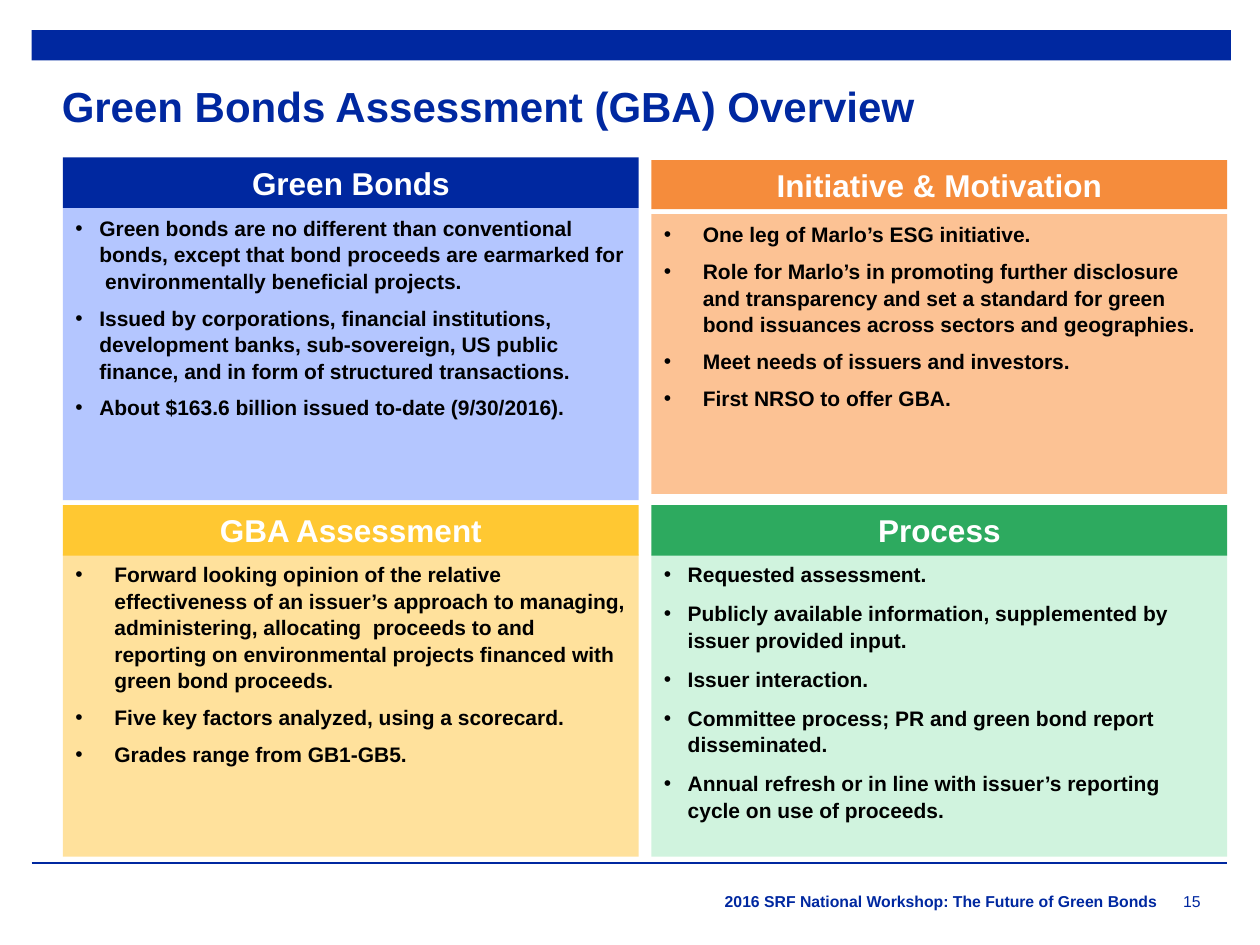
from dataclasses import dataclass

from lxml.etree import SubElement
from pptx import Presentation
from pptx.dml.color import RGBColor
from pptx.enum.shapes import MSO_CONNECTOR, MSO_SHAPE
from pptx.enum.text import MSO_ANCHOR, PP_ALIGN
from pptx.oxml.ns import qn
from pptx.util import Inches, Pt

NAVY = RGBColor(0x00, 0x28, 0xA0)
PALE_BLUE = RGBColor(0xB4, 0xC6, 0xFF)
ORANGE = RGBColor(0xF5, 0x8C, 0x3C)
PALE_ORANGE = RGBColor(0xFC, 0xC2, 0x94)
YELLOW = RGBColor(0xFF, 0xC8, 0x32)
PALE_YELLOW = RGBColor(0xFF, 0xE1, 0x9C)
GREEN = RGBColor(0x2D, 0xAA, 0x5F)
PALE_GREEN = RGBColor(0xD0, 0xF3, 0xDE)
WHITE = RGBColor(0xFF, 0xFF, 0xFF)
BLACK = RGBColor(0x00, 0x00, 0x00)

LEFT_COLUMN, RIGHT_COLUMN, COLUMN_WIDTH = 0.5, 5.17, 4.57


@dataclass(frozen=True)
class Panel:
    heading: str
    points: tuple[str, ...]
    left: float
    heading_top: float
    heading_height: float
    body_top: float
    body_height: float
    heading_fill: RGBColor
    body_fill: RGBColor
    indent: float
    gap: float = 6


PANELS = (
    Panel("Green Bonds", (
        "Green bonds are no different than conventional bonds, except that bond "
        "proceeds are earmarked for  environmentally beneficial projects.",
        "Issued by corporations, financial institutions, development banks, "
        "sub-sovereign, US public finance, and in form of structured transactions.",
        "About $163.6 billion issued to-date (9/30/2016).",
    ), LEFT_COLUMN, 1.25, 0.4, 1.65, 2.32, NAVY, PALE_BLUE, 0.19),
    Panel("Initiative & Motivation", (
        "One leg of Marlo’s ESG initiative.",
        "Role for Marlo’s in promoting further disclosure and transparency and "
        "set a standard for green bond issuances across sectors and geographies.",
        "Meet needs of issuers and investors.",
        "First NRSO to offer GBA.",
    ), RIGHT_COLUMN, 1.27, 0.39, 1.7, 2.22, ORANGE, PALE_ORANGE, 0.31),
    Panel("GBA Assessment", (
        "Forward looking opinion of the relative effectiveness of an issuer’s "
        "approach to managing, administering, allocating  proceeds to and "
        "reporting on environmental projects financed with green bond proceeds.",
        "Five key factors analyzed, using a scorecard.",
        "Grades range from GB1-GB5.",
    ), LEFT_COLUMN, 4.01, 0.4, 4.4, 2.4, YELLOW, PALE_YELLOW, 0.31),
    Panel("Process", (
        "Requested assessment.",
        "Publicly available information, supplemented by issuer provided input.",
        "Issuer interaction.",
        "Committee process; PR and green bond report disseminated.",
        "Annual refresh or in line with issuer’s reporting cycle on use of proceeds.",
    ), RIGHT_COLUMN, 4.01, 0.4, 4.4, 2.4, GREEN, PALE_GREEN, 0.19, 7.2),
)


def add_run(paragraph, text: str, size: float, color: RGBColor, bold: bool = True) -> None:
    run = paragraph.add_run()
    run.text = text
    run.font.name = "Arial"
    run.font.size = Pt(size)
    run.font.bold = bold
    run.font.color.rgb = color


def clear_margins(frame) -> None:
    frame.margin_left = frame.margin_right = 0
    frame.margin_top = frame.margin_bottom = 0


def add_block(slide, left: float, top: float, width: float, height: float, fill: RGBColor):
    block = slide.shapes.add_shape(
        MSO_SHAPE.RECTANGLE, Inches(left), Inches(top), Inches(width), Inches(height))
    block.shadow.inherit = False
    block.fill.solid()
    block.fill.fore_color.rgb = fill
    block.line.fill.background()
    return block


def add_bullet(paragraph, indent: float) -> None:
    properties = paragraph._p.get_or_add_pPr()
    properties.set("marL", str(Inches(indent)))
    properties.set("indent", str(-Inches(indent)))
    SubElement(properties, qn("a:buFont"), typeface="Arial")
    SubElement(properties, qn("a:buChar"), char="•")


def add_panel(slide, panel: Panel) -> None:
    body = add_block(slide, panel.left, panel.body_top, COLUMN_WIDTH,
                     panel.body_height, panel.body_fill).text_frame
    body.word_wrap = True
    body.vertical_anchor = MSO_ANCHOR.TOP
    for number, point in enumerate(panel.points):
        paragraph = body.add_paragraph() if number else body.paragraphs[0]
        add_bullet(paragraph, panel.indent)
        paragraph.alignment = PP_ALIGN.LEFT
        paragraph.line_spacing = 1.05
        if number:
            paragraph.space_before = Pt(panel.gap)
        add_run(paragraph, point, 12, BLACK)

    heading = add_block(slide, panel.left, panel.heading_top, COLUMN_WIDTH,
                        panel.heading_height, panel.heading_fill).text_frame
    clear_margins(heading)
    heading.word_wrap = True
    heading.vertical_anchor = MSO_ANCHOR.MIDDLE
    heading.paragraphs[0].alignment = PP_ALIGN.CENTER
    add_run(heading.paragraphs[0], panel.heading, 18, WHITE)


def add_footer_text(slide, text: str, left: float, width: float,
                    align: PP_ALIGN, bold: bool) -> None:
    frame = slide.shapes.add_textbox(
        Inches(left), Inches(7.08), Inches(width), Inches(0.17)).text_frame
    clear_margins(frame)
    frame.word_wrap = True
    frame.paragraphs[0].alignment = align
    add_run(frame.paragraphs[0], text, 9, NAVY, bold)


def set_title(slide, text: str) -> None:
    title = slide.shapes.title
    title.left, title.top = Inches(0.49), Inches(0.7)
    title.width, title.height = Inches(9), Inches(0.34)
    frame = title.text_frame
    clear_margins(frame)
    frame.word_wrap = True
    frame.vertical_anchor = MSO_ANCHOR.TOP
    paragraph = frame.paragraphs[0]
    paragraph.alignment = PP_ALIGN.LEFT
    paragraph.line_spacing = 0.85
    add_run(paragraph, text, 24, NAVY)


def main() -> None:
    deck = Presentation()
    deck.slide_width, deck.slide_height = Inches(10), Inches(7.5)
    slide = deck.slides.add_slide(deck.slide_layouts[5])

    # Top band and footer rule
    add_block(slide, 0.25, 0.24, 9.52, 0.24, NAVY)
    rule = slide.shapes.add_connector(
        MSO_CONNECTOR.STRAIGHT, Inches(0.25), Inches(6.85), Inches(9.74), Inches(6.85))
    rule.line.color.rgb = NAVY
    rule.line.width = Pt(1)
    SubElement(rule._element.spPr, qn("a:effectLst"))

    # Title and the four panels
    set_title(slide, "Green Bonds Assessment (GBA) Overview")
    for panel in PANELS:
        add_panel(slide, panel)

    # Footer
    add_footer_text(slide, "2016 SRF National Workshop: The Future of Green Bonds",
                    4.79, 4.39, PP_ALIGN.RIGHT, True)
    add_footer_text(slide, "15", 9.39, 0.47, PP_ALIGN.LEFT, False)

    deck.save("out.pptx")


if __name__ == "__main__":
    main()
